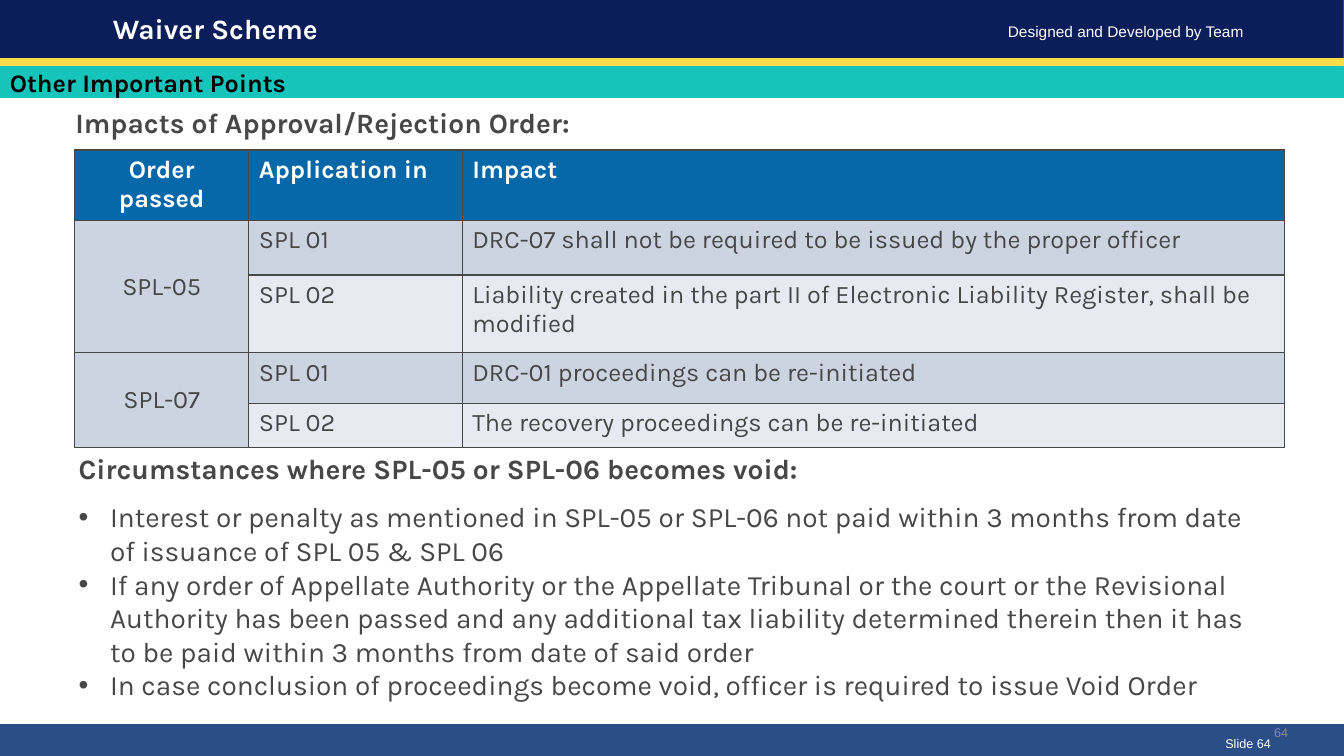
from lxml import etree
from pptx import Presentation
from pptx.dml.color import RGBColor
from pptx.enum.shapes import MSO_SHAPE
from pptx.enum.text import MSO_ANCHOR, MSO_AUTO_SIZE, PP_ALIGN
from pptx.oxml.ns import qn
from pptx.util import Cm, Pt

RECT = MSO_SHAPE.RECTANGLE
TOP, MID = MSO_ANCHOR.TOP, MSO_ANCHOR.MIDDLE
LEFT, MIDDLE, RIGHT = PP_ALIGN.LEFT, PP_ALIGN.CENTER, PP_ALIGN.RIGHT
FIXED = MSO_AUTO_SIZE.NONE
GREY, WHITE, BLUE = "474747", "FFFFFF", "0768A9"
BANDS = ["CCD4E2", "E7EBF1"]


def paint(part, hue):
    part.solid()
    part.fore_color.rgb = RGBColor.from_string(hue)


def write(para, text, size, hue, bold=False, face="Karla", align=LEFT):
    para.alignment = align
    run = para.add_run()
    run.text = text
    run.font.size = Pt(size)
    run.font.name = face
    run.font.bold = bold
    paint(run.font.fill, hue)


deck = Presentation()
deck.slide_width, deck.slide_height = Cm(33.87), Cm(19.05)
slide = deck.slides.add_slide(deck.slide_layouts[1])
shapes = slide.shapes
title, body = slide.placeholders

bars = [
    (0, 1.57, "0B1E59", GREY),
    (18.26, 0.79, "2C4E86", "2C4E86"),
    (1.47, 0.18, "FFDB49", "FFDB49"),
    (1.68, 0.79, "17C4BB", "17C4BB"),
]
for top, high, hue, edge in bars:
    bar = shapes.add_shape(RECT, 0, Cm(top), deck.slide_width, Cm(high))
    bar.shadow.inherit = False
    paint(bar.fill, hue)
    paint(bar.line.fill, edge)
    bar.line.width = Pt(0.75)

labels = [
    (25.15, 0.43, 9.32, 0.74, "Designed and Developed by Team", 11, WHITE, False, "Arial"),
    (30.63, 18.42, 2.26, 0.64, "Slide 64", 9, WHITE, False, "Arial"),
    (0, 1.57, 33.87, 1.02, "Other Important Points", 18, "000000", True, "Karla"),
    (1.65, 2.54, 30.5, 1.12, "Impacts of Approval/Rejection Order:", 20, GREY, True, "Karla"),
]
for left, top, wide, high, *style in labels:
    box = shapes.add_textbox(Cm(left), Cm(top), Cm(wide), Cm(high))
    box.text_frame.word_wrap = True
    write(box.text_frame.paragraphs[0], *style)

page = shapes.add_textbox(Cm(30.2), Cm(18.26), Cm(2.26), Cm(0.64))
frame = page.text_frame
frame.word_wrap = True
frame.margin_left = frame.margin_right = frame.margin_top = frame.margin_bottom = 0
write(frame.paragraphs[0], "64", 9, "8C8C8C", face="Arial", align=RIGHT)

rows = [
    ("Order passed", "Application in", "Impact"),
    ("SPL-05", "SPL 01", "DRC-07 shall not be required to be issued by the proper officer"),
    ("", "SPL 02", "Liability created in the part II of Electronic Liability Register, shall be modified"),
    ("SPL-07", "SPL 01", "DRC-01 proceedings can be re-initiated"),
    ("", "SPL 02", "The recovery proceedings can be re-initiated"),
]
widths = [4.39, 5.38, 20.73]
heights = [1.78, 1.37, 1.96, 1.27, 1.12]
grid = shapes.add_table(5, 3, Cm(1.88), Cm(3.78), Cm(sum(widths)), Cm(sum(heights))).table
for col, wide in zip(grid.columns, widths):
    col.width = Cm(wide)
for row, high in zip(grid.rows, heights):
    row.height = Cm(high)
for r, row in enumerate(rows):
    for c, text in enumerate(row):
        cell = grid.cell(r, c)
        props = cell._tc.get_or_add_tcPr()
        for side in ("lnL", "lnR", "lnT", "lnB"):
            line = etree.SubElement(props, qn("a:" + side), w=str(Pt(1)))
            fill = etree.SubElement(line, qn("a:solidFill"))
            etree.SubElement(fill, qn("a:srgbClr"), val=GREY)
        band = BANDS[0] if c == 0 else BANDS[(r - 1) % 2]
        paint(cell.fill, band if r else BLUE)
        cell.vertical_anchor = MID if r and c == 0 else TOP
        if text:
            write(cell.text_frame.paragraphs[0], text, 18, GREY if r else WHITE,
                  bold=r == 0, align=LEFT if c else MIDDLE)
for r in (1, 3):
    grid.cell(r, 0).merge(grid.cell(r + 1, 0))

places = [(title, 2.59, 0.25, 27.38, 1.07), (body, 1.73, 11.25, 30.5, 6.63)]
for holder, left, top, wide, high in places:
    holder.left, holder.top = Cm(left), Cm(top)
    holder.width, holder.height = Cm(wide), Cm(high)
    holder.text_frame.auto_size = FIXED
    holder.text_frame.vertical_anchor = TOP
    holder.element.getparent().append(holder.element)

head = title.text_frame.paragraphs[0]
head.line_spacing = 0.9
write(head, "Waiver Scheme", 20, WHITE, True)

points = [
    "Circumstances where SPL-05 or SPL-06 becomes void:",
    "Interest or penalty as mentioned in SPL-05 or SPL-06 not paid within 3 months from date of issuance of SPL 05 & SPL 06",
    "If any order of Appellate Authority or the Appellate Tribunal or the court or the Revisional Authority has been passed and any additional tax liability determined therein then it has to be paid within 3 months from date of said order",
    "In case conclusion of proceedings become void, officer is required to issue Void Order",
]
frame = body.text_frame
for i, text in enumerate(points):
    para = frame.add_paragraph() if i else frame.paragraphs[0]
    props = para._p.get_or_add_pPr()
    inset = Cm(0.79) if i else 0
    props.set("marL", str(inset))
    props.set("indent", str(-inset))
    if i:
        etree.SubElement(props, qn("a:buFont"), typeface="Arial")
        etree.SubElement(props, qn("a:buChar"), char="•")
    else:
        etree.SubElement(props, qn("a:buNone"))
    para.space_before = Pt(0)
    para.space_after = Pt(0 if i else 10.5)
    write(para, text, 20, GREY, bold=i == 0)

deck.save("out.pptx")
